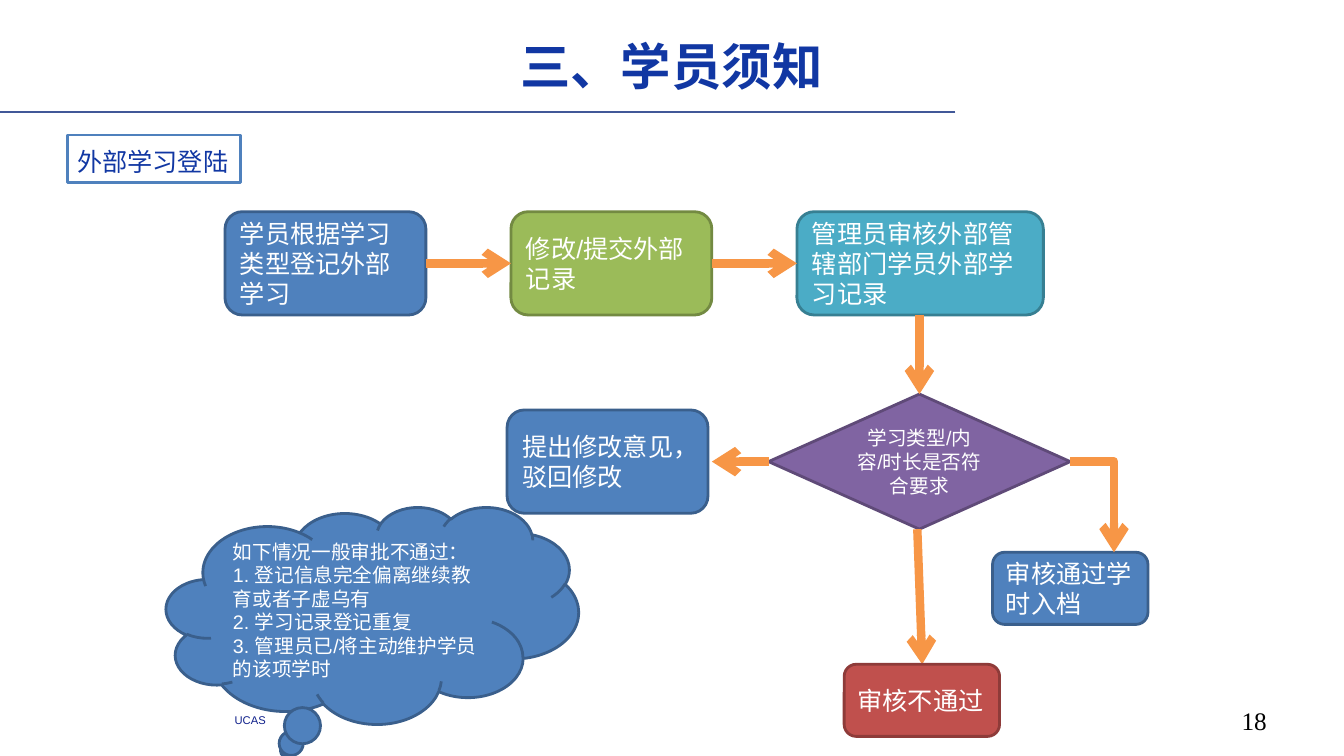
"""Builds the flow chart slide on registering external study."""
import pptx
import pptx.dml.color
import pptx.enum.shapes
import pptx.enum.text
import pptx.oxml.ns
import pptx.util
from lxml import etree

Pt = pptx.util.Pt
Shape = pptx.enum.shapes.MSO_SHAPE
Connector = pptx.enum.shapes.MSO_CONNECTOR
Align = pptx.enum.text.PP_ALIGN
Anchor = pptx.enum.text.MSO_ANCHOR
qn = pptx.oxml.ns.qn

BLUE, BLUE_EDGE = "4F81BD", "3A5F8C"
HEADING, ORANGE, WHITE = "1137A3", "F79646", "FFFFFF"


def color(value):
    return pptx.dml.color.RGBColor.from_string(value)


class FlowSlide:
    font = "Arial"
    edge_width = 2
    arrow_width = 6

    def __init__(self, page):
        self.page = page

    def set_text(self, shape, lines, size, ink, font=None, align=Align.LEFT,
                 anchor=Anchor.MIDDLE, bold=False):
        frame = shape.text_frame
        frame.word_wrap = True
        frame.vertical_anchor = anchor
        frame.text = "\n".join(lines)
        for para in frame.paragraphs:
            para.alignment = align
            para.font.size = Pt(size)
            para.font.name = font or self.font
            para.font.bold = bold
            para.font.color.rgb = color(ink)

    def title(self, text, left, top, width, height):
        box = self.page.shapes.title
        box.left, box.top, box.width, box.height = map(Pt, (left, top, width, height))
        self.set_text(box, [text], 36, HEADING, "Times New Roman", Align.CENTER, bold=True)

    def label(self, text, left, top, width, height, size, ink, **style):
        box = self.page.shapes.add_textbox(*map(Pt, (left, top, width, height)))
        self.set_text(box, [text], size, ink, anchor=Anchor.TOP, **style)

    def node(self, lines, left, top, width, height, fill=BLUE, edge=BLUE_EDGE,
             kind=Shape.ROUNDED_RECTANGLE, size=18, ink=WHITE, **style):
        shape = self.page.shapes.add_shape(kind, *map(Pt, (left, top, width, height)))
        shape.shadow.inherit = False
        shape.fill.solid()
        shape.fill.fore_color.rgb = color(fill)
        shape.line.color.rgb = color(edge)
        shape.line.width = Pt(self.edge_width)
        self.set_text(shape, lines, size, ink, **style)
        return shape

    def line(self, start, end, ink, width, kind=Connector.STRAIGHT):
        line = self.page.shapes.add_connector(kind, *map(Pt, (*start, *end)))
        line.line.color.rgb = color(ink)
        line.line.width = Pt(width)
        etree.SubElement(line._element.spPr, qn("a:effectLst"))
        return line

    def arrow(self, start, end, bent=False):
        kind = Connector.ELBOW if bent else Connector.STRAIGHT
        arrow = self.line(start, end, ORANGE, self.arrow_width, kind)
        etree.SubElement(arrow.get_or_add_ln(), qn("a:tailEnd"), type="arrow")
        if bent:
            arrow._element.spPr.find(qn("a:prstGeom")).set("prst", "bentConnector2")


def main():
    deck = pptx.Presentation()
    deck.slide_width, deck.slide_height = Pt(960), Pt(540)
    flow = FlowSlide(deck.slides.add_slide(deck.slide_layouts[5]))

    flow.line((682.5, 80), (0, 80), "415898", 0.78)
    flow.label("UCAS", 160.5, 506, 53, 17, 8, "0F208B")
    flow.label("18", 688, 500.5, 224, 29, 18, "000000",
               font="Times New Roman", align=Align.RIGHT)
    flow.title("三、学员须知", 188, 21, 583, 51)
    topic = flow.node(["外部学习登陆"], 48, 96.5, 124, 34, WHITE, BLUE, Shape.RECTANGLE,
                      ink=HEADING, font="Noto Sans CJK SC", anchor=Anchor.TOP)
    topic.text_frame.paragraphs[0].line_spacing = Pt(26)
    topic.text_frame.paragraphs[0].space_after = Pt(6)

    left, top, pitch, width, height = 160.75, 151.25, 204.25, 143.5, 73.75
    middle = top + height / 2
    steps = [
        ("学员根据学习类型登记外部学习", width, BLUE, BLUE_EDGE),
        ("修改/提交外部记录", width, "9BBB59", "738A42"),
        ("管理员审核外部管辖部门学员外部学习记录", 176, "4BACC6", "377F92"),
    ]
    for index, (text, step_width, fill, edge) in enumerate(steps):
        step_left = left + index * pitch
        flow.node([text], step_left, top, step_width, height, fill, edge)
        if index:
            flow.arrow((step_left - pitch + width, middle), (step_left, middle))

    center, level = 656.75, 329.75
    half_width, half_height = 107.75, 48.25
    flow.node(["学习类型/内容/时长是否符合要求"], center - half_width, level - half_height,
              2 * half_width, 2 * half_height, "8064A2", "5F4A78",
              Shape.FLOWCHART_DECISION, 14, align=Align.CENTER)
    flow.arrow((center, top + height), (center, level - half_height))
    flow.arrow((655.25, level + half_height), (658.75, 474.5))
    flow.node(["审核不通过"], 603, 474.5, 111, 51.5, "C0504D", "8E3B39")
    flow.node(["审核通过学时入档"], 709, 394.5, 111, 51.5)
    flow.arrow((center - half_width, level), (508.5, level))
    flow.node(["提出修改意见，驳回修改"], 362.25, level - height / 2, width, height)
    flow.node(["如下情况一般审批不通过：",
               "1. 登记信息完全偏离继续教育或者子虚乌有",
               "2. 学习记录登记重复",
               "3. 管理员已/将主动维护学员的该项学时"],
              118.75, 362, 294.5, 155, kind=Shape.CLOUD_CALLOUT, size=14)
    flow.arrow((center + half_width, level), (795.75, 394.5), bent=True)

    deck.save("out.pptx")


if __name__ == "__main__":
    main()
